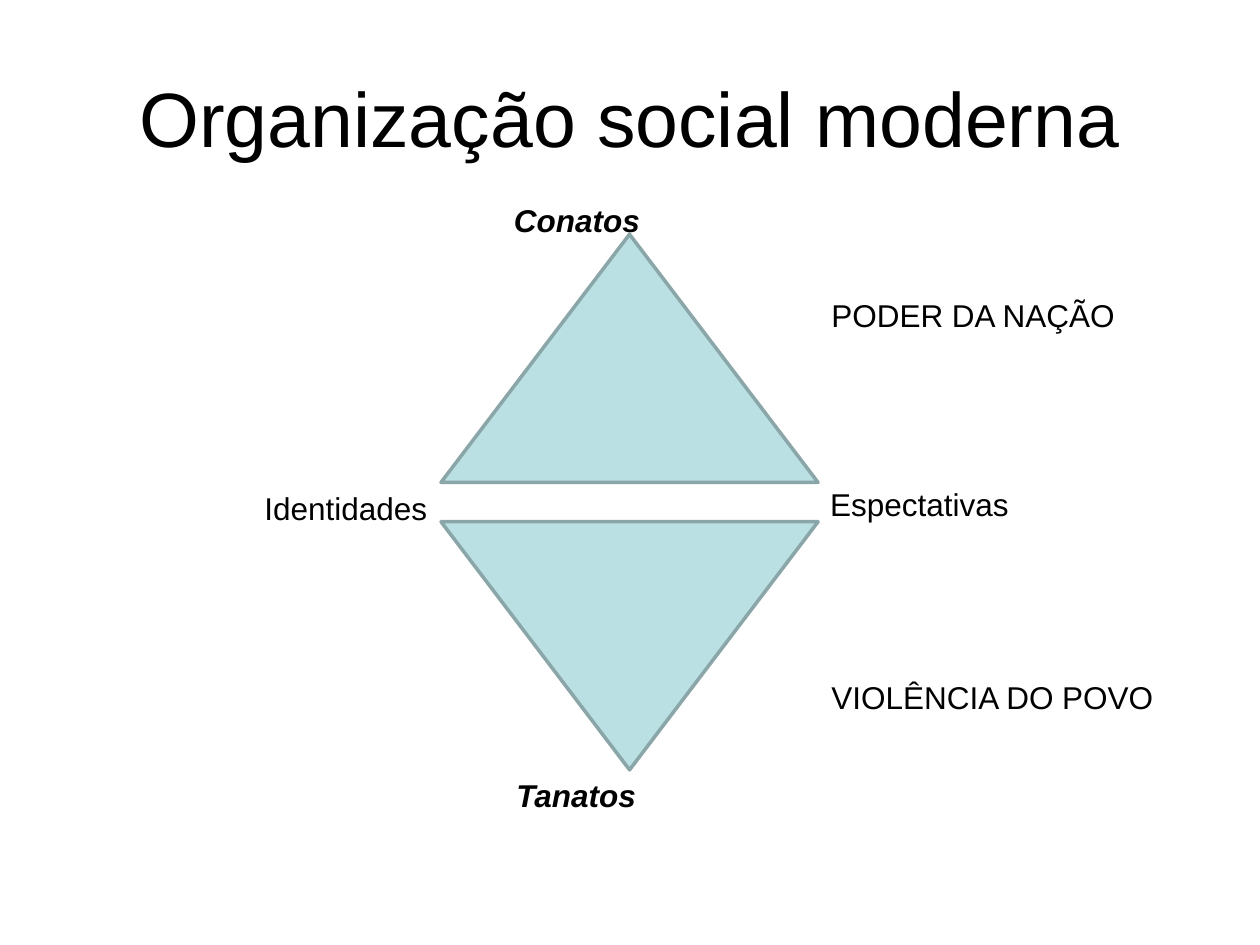
from dataclasses import dataclass

from pptx import Presentation
from pptx.dml.color import RGBColor
from pptx.enum.shapes import MSO_SHAPE as Shape
from pptx.enum.text import MSO_ANCHOR as Anchor, MSO_AUTO_SIZE as AutoSize, PP_ALIGN as Align
from pptx.util import Pt


@dataclass(frozen=True)
class Theme:
    font: str = "Arial"
    ink: RGBColor = RGBColor(0x00, 0x00, 0x00)
    fill: RGBColor = RGBColor(0xBB, 0xE0, 0xE3)
    outline: RGBColor = RGBColor(0x8A, 0xA6, 0xA8)
    title_size: int = 44
    label_size: int = 18
    outline_width: int = 2


class PageBuilder:
    def __init__(self, page, theme):
        self.page = page
        self.theme = theme

    def style(self, para, size, strong=False):
        font = para.font
        font.name = self.theme.font
        font.size = Pt(size)
        font.color.rgb = self.theme.ink
        font.bold = font.italic = strong

    def title(self, text, left, top, width, height):
        title = self.page.shapes.title
        title.left, title.top = Pt(left), Pt(top)
        title.width, title.height = Pt(width), Pt(height)
        frame = title.text_frame
        frame.text = text
        frame.vertical_anchor = Anchor.MIDDLE
        para = frame.paragraphs[0]
        para.alignment = Align.CENTER
        self.style(para, self.theme.title_size)

    def triangle(self, left, top, width, height, rotation=0):
        triangle = self.page.shapes.add_shape(
            Shape.ISOSCELES_TRIANGLE, Pt(left), Pt(top), Pt(width), Pt(height))
        triangle.rotation = rotation
        triangle.shadow.inherit = False
        triangle.fill.solid()
        triangle.fill.fore_color.rgb = self.theme.fill
        triangle.line.color.rgb = self.theme.outline
        triangle.line.width = Pt(self.theme.outline_width)

    def label(self, text, left, top, width, strong=False):
        box = self.page.shapes.add_textbox(Pt(left), Pt(top), Pt(width), Pt(28.8))
        frame = box.text_frame
        frame.word_wrap = False
        frame.auto_size = AutoSize.SHAPE_TO_FIT_TEXT
        frame.text = text
        self.style(frame.paragraphs[0], self.theme.label_size, strong)


def main():
    deck = Presentation()
    deck.slide_width, deck.slide_height = Pt(720), Pt(540)
    builder = PageBuilder(deck.slides.add_slide(deck.slide_layouts[5]), Theme())

    builder.title("Organização social moderna", 36, 21.6, 648, 90)
    for top, rotation in ((133.9, 0), (298.1, 180)):
        builder.triangle(252, top, 215.5, 141.8, rotation)

    builder.label("Conatos", 286.6, 111.6, 87.1, strong=True)
    builder.label("Tanatos", 288, 439.9, 88.6, strong=True)
    builder.label("Identidades", 144, 275.8, 108.7)
    builder.label("PODER DA NAÇÃO", 468, 165.6, 177.8)
    builder.label("VIOLÊNCIA DO POVO", 468, 383.8, 200.2)
    builder.label("Espectativas", 467.3, 273.6, 117.4)

    deck.save("out.pptx")


if __name__ == "__main__":
    main()
